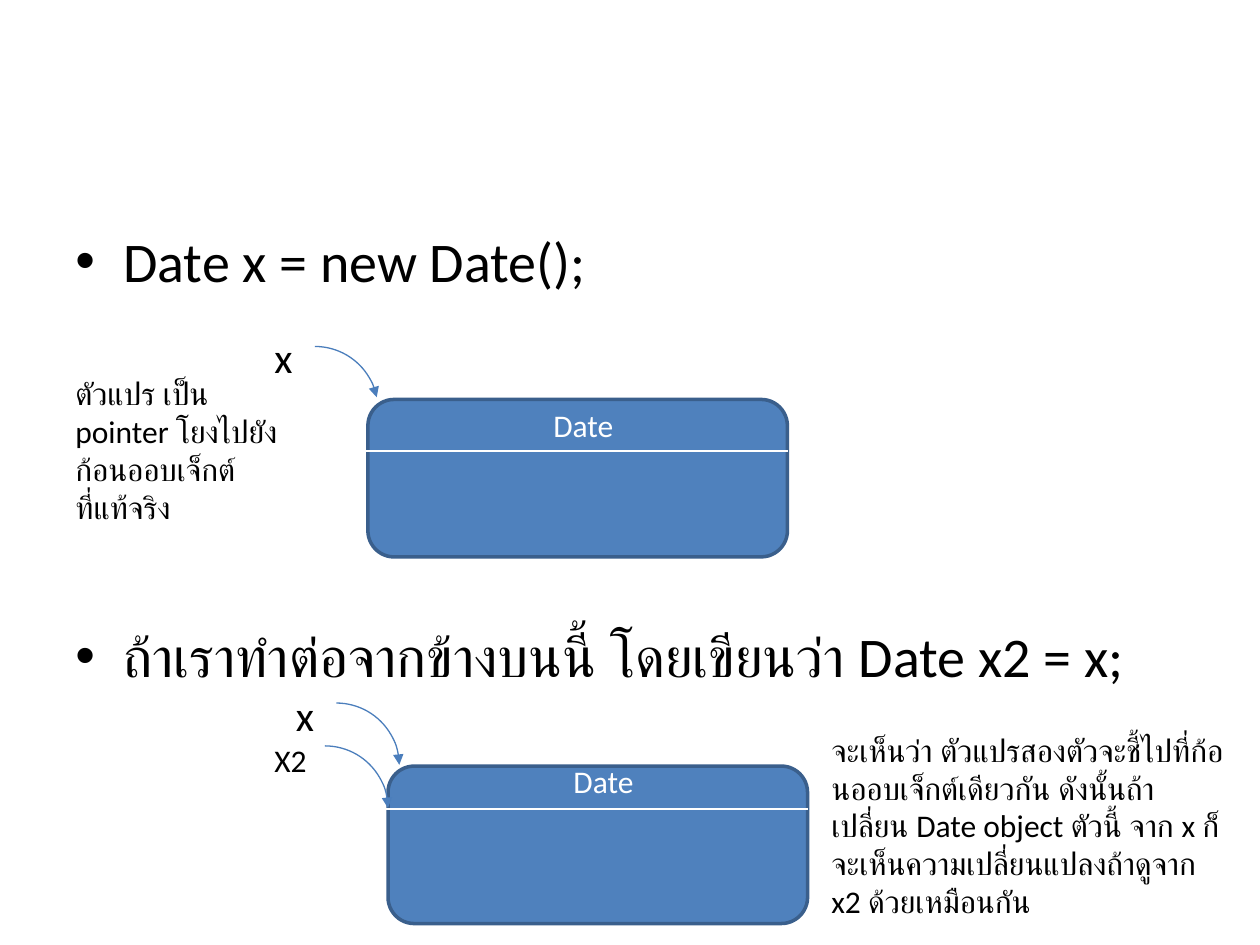
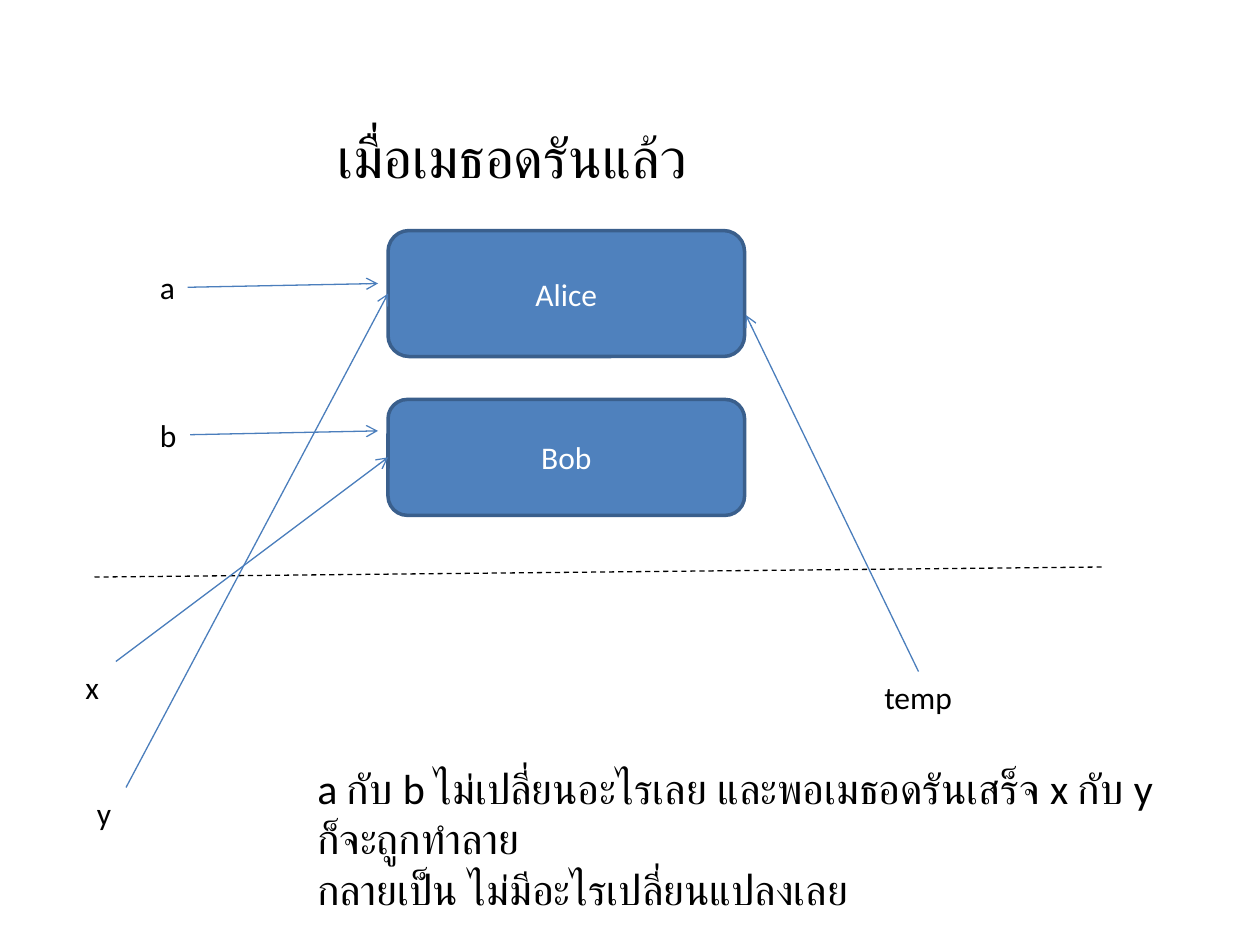
from lxml import etree
from pptx import Presentation
from pptx.dml.color import RGBColor
from pptx.enum import dml, shapes, text
from pptx.oxml import ns
from pptx.util import Inches, Pt

FONT = "Calibri"
BLACK, WHITE = "000000", "FFFFFF"
BOX_FILL, BOX_LINE, ARROW = "4F81BD", "3A5F8C", "4B7EBC"
LEFT_SIDE, RIGHT_SIDE, TOP_SIDE = 1, 3, 0


def rgb(value):
    return RGBColor.from_string(value)


def add_run(p, content, size, color=BLACK):
    r = p.add_run()
    r.text = content
    r.font.name = FONT
    r.font.size = Pt(size)
    r.font.color.rgb = rgb(color)


def add_text(slide, x, y, w, h, lines, size=18, color=BLACK, align=None, wrap=True):
    sp = slide.shapes.add_textbox(Inches(x), Inches(y), Inches(w), Inches(h))
    tf = sp.text_frame
    tf.word_wrap = wrap
    tf.auto_size = text.MSO_AUTO_SIZE.SHAPE_TO_FIT_TEXT
    for i, line in enumerate(lines):
        p = tf.add_paragraph() if i else tf.paragraphs[0]
        p.alignment = align
        add_run(p, line, size, color)
    return sp


def add_label(slide, x, y, w, content):
    return add_text(slide, x, y, w, 0.4, [content], wrap=False)


def add_bullets(slide, x, y, w, h, lines, gap):
    sp = add_text(slide, x, y, w, h, lines, 32)
    sp.text_frame.auto_size = text.MSO_AUTO_SIZE.NONE
    for i, p in enumerate(sp.text_frame.paragraphs):
        p.space_before = Pt(gap if i else 6.4)
        props = p._p.get_or_add_pPr()
        props.set("marL", str(Inches(0.38)))
        props.set("indent", str(-Inches(0.38)))
        etree.SubElement(props, ns.qn("a:buFont")).set("typeface", "Arial")
        etree.SubElement(props, ns.qn("a:buChar")).set("char", "•")


def add_arrowhead(sp, kind):
    etree.SubElement(sp.line._get_or_add_ln(), ns.qn("a:tailEnd")).set("type", kind)


def add_box(slide, x, y, w, h, name=""):
    sp = slide.shapes.add_shape(shapes.MSO_SHAPE.ROUNDED_RECTANGLE,
                                Inches(x), Inches(y), Inches(w), Inches(h))
    sp.shadow.inherit = False
    sp.fill.solid()
    sp.fill.fore_color.rgb = rgb(BOX_FILL)
    sp.line.color.rgb = rgb(BOX_LINE)
    sp.line.width = Pt(2)
    if name:
        tf = sp.text_frame
        tf.vertical_anchor = text.MSO_ANCHOR.MIDDLE
        p = tf.paragraphs[0]
        p.alignment = text.PP_ALIGN.CENTER
        add_run(p, name, 18, WHITE)
    return sp


def add_line(slide, start, end, color=ARROW, head=None, dash=None):
    c = slide.shapes.add_connector(shapes.MSO_CONNECTOR.STRAIGHT,
                                   *map(Inches, start + end))
    etree.SubElement(c._element.spPr, ns.qn("a:effectLst"))
    c.line.color.rgb = rgb(color)
    c.line.width = Pt(0.75)
    if dash:
        c.line.dash_style = dash
    if head:
        add_arrowhead(c, head)
    return c


def add_arc(slide, x, y, end_degrees):
    sp = slide.shapes.add_shape(shapes.MSO_SHAPE.ARC, Inches(x), Inches(y),
                                Inches(1), Inches(1))
    sp.shadow.inherit = False
    sp.adjustments[0] = 270 * 0.6
    sp.adjustments[1] = end_degrees * 0.6
    sp.fill.background()
    sp.line.color.rgb = rgb(ARROW)
    sp.line.width = Pt(0.75)
    add_arrowhead(sp, "triangle")


def add_date_object(slide, x, y, name_y, divider_y):
    add_box(slide, x, y, 3.33, 1.25)
    add_text(slide, x - 0.25, name_y, 3.92, 0.4, ["Date"], color=WHITE,
             align=text.PP_ALIGN.CENTER)
    add_line(slide, (x - 0.08, divider_y), (x + 3.33, divider_y), WHITE)


def build_reference_slide(slide):
    add_bullets(slide, 0.5, 1.75, 9, 4.95,
                ["Date x = new Date();",
                 "ถ้าเราทำต่อจากข้างบนนี้ โดยเขียนว่า Date x2 = x;"], 187)

    add_text(slide, 2.08, 2.58, 0.5, 0.5, ["x"], 24)
    add_arc(slide, 2, 2.75, 348.83)
    add_date_object(slide, 2.92, 3.17, 3.17, 3.58)
    add_text(slide, 0.5, 2.92, 1.83, 1.01,
             ["ตัวแปร เป็น pointer โยงไปยังก้อนออบเจ็กต์ที่แท้จริง"])

    add_text(slide, 2.25, 5.42, 0.5, 0.5, ["x"], 24)
    add_arc(slide, 2.17, 5.58, 358.9)
    add_date_object(slide, 3.08, 6.08, 6, 6.42)
    add_label(slide, 2.08, 5.83, 0.46, "X2")
    add_arc(slide, 2.08, 5.92, 359.16)
    add_text(slide, 6.5, 5.75, 3.33, 1.62,
             ["จะเห็นว่า ตัวแปรสองตัวจะชี้ไปที่ก้อนออบเจ็กต์เดียวกัน ดังนั้นถ้าเปลี่ยน "
              "Date object ตัวนี้ จาก x ก็จะเห็นความเปลี่ยนแปลงถ้าดูจาก x2 ด้วยเหมือนกัน"])


def build_method_slide(slide):
    alice = add_box(slide, 3.08, 1.83, 2.83, 1, "Alice")
    bob = add_box(slide, 3.08, 3.17, 2.83, 0.92, "Bob")

    for name, y, w, end_y in (("a", 2.08, 0.32, 2.25), ("b", 3.25, 0.34, 3.42)):
        label = add_label(slide, 1.17, y, w, name)
        arrow = add_line(slide, (1.17 + w, y + 0.2), (3, end_y), head="arrow")
        arrow.begin_connect(label, RIGHT_SIDE)

    add_line(slide, (0.75, 4.58), (8.75, 4.5), BLACK, dash=dml.MSO_LINE.DASH)

    for name, x, y, w, start_x, box in (("x", 0.58, 5.25, 0.31, 0.92, bob),
                                        ("y", 0.67, 6.25, 0.32, 1, alice)):
        add_label(slide, x, y, w, name)
        arrow = add_line(slide, (start_x, y), (3.08, y), head="arrow")
        arrow.end_connect(box, LEFT_SIDE)

    temp = add_label(slide, 6.92, 5.33, 0.74, "temp")
    arrow = add_line(slide, (7.29, 5.33), (5.92, 2.5), head="arrow")
    arrow.begin_connect(temp, TOP_SIDE)

    add_text(slide, 2.58, 0.92, 5.67, 0.64, ["เมื่อเมธอดรันแล้ว"], 32)
    add_text(slide, 2.42, 6, 6.87, 0.91,
             ["a กับ b ไม่เปลี่ยนอะไรเลย และพอเมธอดรันเสร็จ x กับ y ก็จะถูกทำลาย",
              "กลายเป็น ไม่มีอะไรเปลี่ยนแปลงเลย"], 24, wrap=False)


def main():
    prs = Presentation()
    prs.slide_width, prs.slide_height = Inches(10), Inches(7.5)
    for build in (build_reference_slide, build_method_slide):
        build(prs.slides.add_slide(prs.slide_layouts[6]))
    prs.save("out.pptx")


if __name__ == "__main__":
    main()
